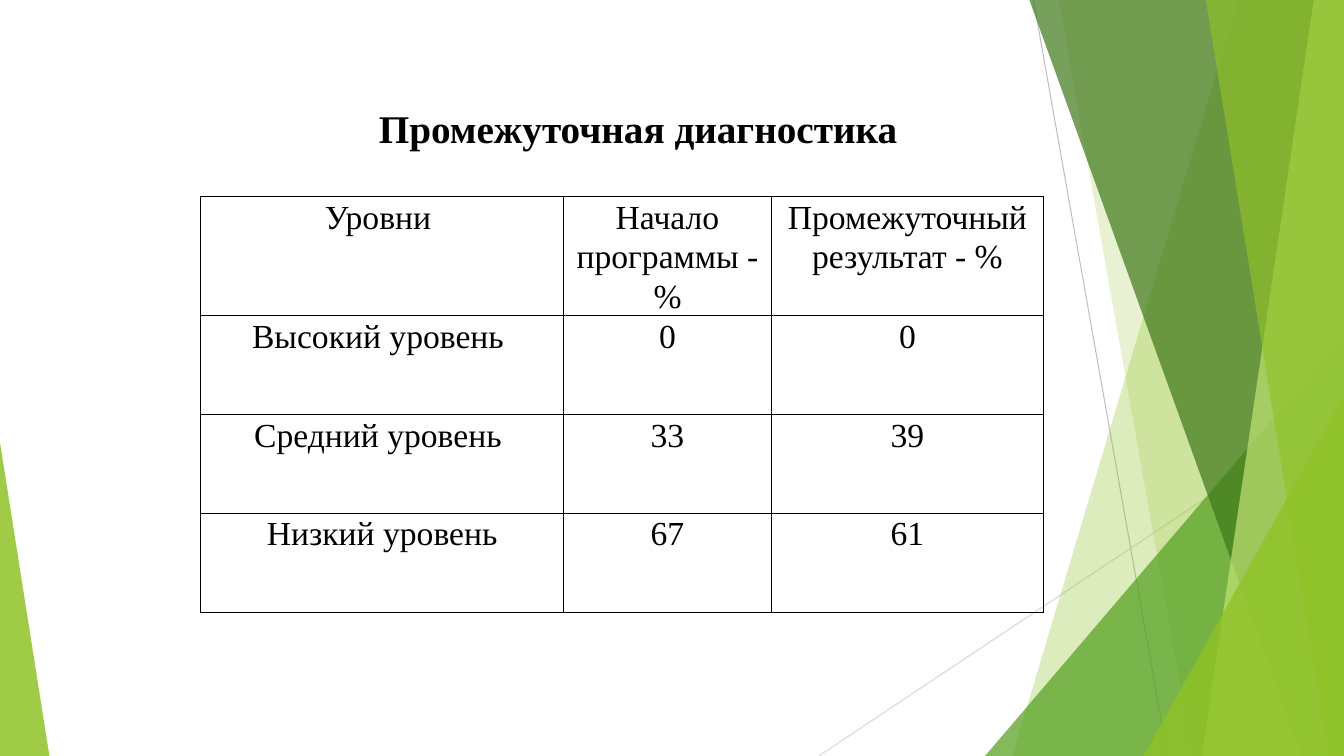
from lxml import etree
from pptx import Presentation, util as u
from pptx.dml.color import RGBColor
from pptx.enum import shapes, text
from pptx.oxml import parse_xml
from pptx.oxml.ns import qn, nsdecls

WIDTH, HEIGHT = 13.33, 7.5
FONT = "Times New Roman"
BLACK, LIME, GREEN, DARK_GREEN, PALE_LIME = "000000", "90C226", "54A021", "3F7819", "C0E474"

ROWS = [
    ("Уровни ", "Начало программы - %", "Промежуточный результат - %"),
    ("Высокий уровень ", "0", "0"),
    ("Средний уровень ", "33", "39"),
    ("Низкий уровень", "67", "61"),
]
COLUMN_WIDTHS = (3.6, 2.06, 2.7)
ROW_HEIGHT = 0.98


def color(value):
    return RGBColor.from_string(value)


def fill_glass(shape, value, opacity):
    """Fill a shape without outline, opacity in percent."""
    shape.shadow.inherit = False
    shape.line.fill.background()
    shape.fill.solid()
    shape.fill.fore_color.rgb = color(value)
    solid = shape._element.spPr.find(qn("a:solidFill"))
    etree.SubElement(solid[0], qn("a:alpha"), val=str(opacity * 1000))


def add_thin_line(slide, start, end, value):
    points = [u.Inches(length) for length in (*start, *end)]
    line = slide.shapes.add_connector(shapes.MSO_CONNECTOR.STRAIGHT, *points)
    line.line.color.rgb = color(value)
    line.line.width = u.Pt(0.75)
    etree.SubElement(line._element.spPr, qn("a:effectLst"))


def add_ribbon(slide, box, top_inset, bottom_inset, value, opacity):
    """Fill the box from a slanted left edge to its right side."""
    left, top, width, height = box
    right, bottom = left + width, top + height
    corners = [(right - top_inset, top), (right, top), (right, bottom),
               (right - bottom_inset, bottom)]
    corners = [(u.Inches(x), u.Inches(y)) for x, y in corners]
    builder = slide.shapes.build_freeform(*corners[0])
    builder.add_line_segments(corners[1:], close=True)
    fill_glass(builder.convert_to_shape(), value, opacity)


def add_corner(slide, box, apex, value, opacity):
    """Add a triangle whose apex sits at a share of the box width."""
    triangle = slide.shapes.add_shape(
        shapes.MSO_SHAPE.ISOSCELES_TRIANGLE, *map(u.Inches, box))
    triangle.adjustments[0] = apex
    fill_glass(triangle, value, opacity)


def add_right_decoration(slide, box):
    left, top, width, height = box
    right, bottom = left + width, top + height

    def corner(corner_width, corner_height, value, opacity):
        place = (right - corner_width, bottom - corner_height, corner_width, corner_height)
        add_corner(slide, place, 1, value, opacity)

    add_thin_line(slide, (right - 3.08, top), (right - 1.75, bottom), "BFBFBF")
    add_thin_line(slide, (right, top + 4.03), (left, bottom), "D9D9D9")
    add_ribbon(slide, box, 1.05, 3.29, LIME, 30)
    add_ribbon(slide, box, 2.83, 1.5, LIME, 20)
    corner(3.56, 4.17, GREEN, 72)
    add_ribbon(slide, box, 3.12, 0.42, DARK_GREEN, 70)
    add_ribbon(slide, box, 0.3, 1.41, PALE_LIME, 70)
    add_ribbon(slide, box, 1.37, 0.15, LIME, 65)
    corner(1.99, 3.57, LIME, 80)


def format_font(paragraph, size, bold=False):
    for run in paragraph.runs:
        run.font.name = FONT
        run.font.size = u.Pt(size)
        run.font.bold = bold
        run.font.color.rgb = color(BLACK)


def add_title(slide, box, words):
    frame = slide.shapes.add_textbox(*map(u.Inches, box)).text_frame
    frame.word_wrap = True
    frame.text = words
    format_font(frame.paragraphs[0], 28, bold=True)


def format_cell(cell):
    cell.margin_left = cell.margin_right = u.Inches(0.07)
    cell.margin_top = cell.margin_bottom = 0
    cell.fill.background()
    paragraph = cell.text_frame.paragraphs[0]
    paragraph.alignment = text.PP_ALIGN.CENTER
    paragraph.line_spacing = 1.07
    format_font(paragraph, 24)
    properties = cell._tc.get_or_add_tcPr()
    for index, side in enumerate(("lnL", "lnR", "lnT", "lnB")):
        properties.insert(index, parse_xml(
            f'<a:{side} {nsdecls("a")} w="12700"><a:solidFill>'
            f'<a:srgbClr val="{BLACK}"/></a:solidFill></a:{side}>'))


def add_levels_table(slide, left, top):
    box = (left, top, sum(COLUMN_WIDTHS), ROW_HEIGHT * len(ROWS))
    table = slide.shapes.add_table(
        len(ROWS), len(COLUMN_WIDTHS), *map(u.Inches, box)).table
    table.first_row = table.horz_banding = False
    for column, width in zip(table.columns, COLUMN_WIDTHS):
        column.width = u.Inches(width)
    for row, values in zip(table.rows, ROWS):
        row.height = u.Inches(ROW_HEIGHT)
        for cell, value in zip(row.cells, values):
            cell.text = value
            format_cell(cell)


def main():
    presentation = Presentation()
    presentation.slide_width = u.Inches(WIDTH)
    presentation.slide_height = u.Inches(HEIGHT)
    slide = presentation.slides.add_slide(presentation.slide_layouts[6])
    add_right_decoration(slide, (8.12, 0, WIDTH - 8.12, HEIGHT))
    add_corner(slide, (0, HEIGHT - 3.11, 0.49, 3.11), 0, LIME, 85)
    add_levels_table(slide, 1.99, 1.95)
    add_title(slide, (3.66, 0.99, 5.99, 0.57), "Промежуточная диагностика")
    presentation.save("out.pptx")


if __name__ == "__main__":
    main()
